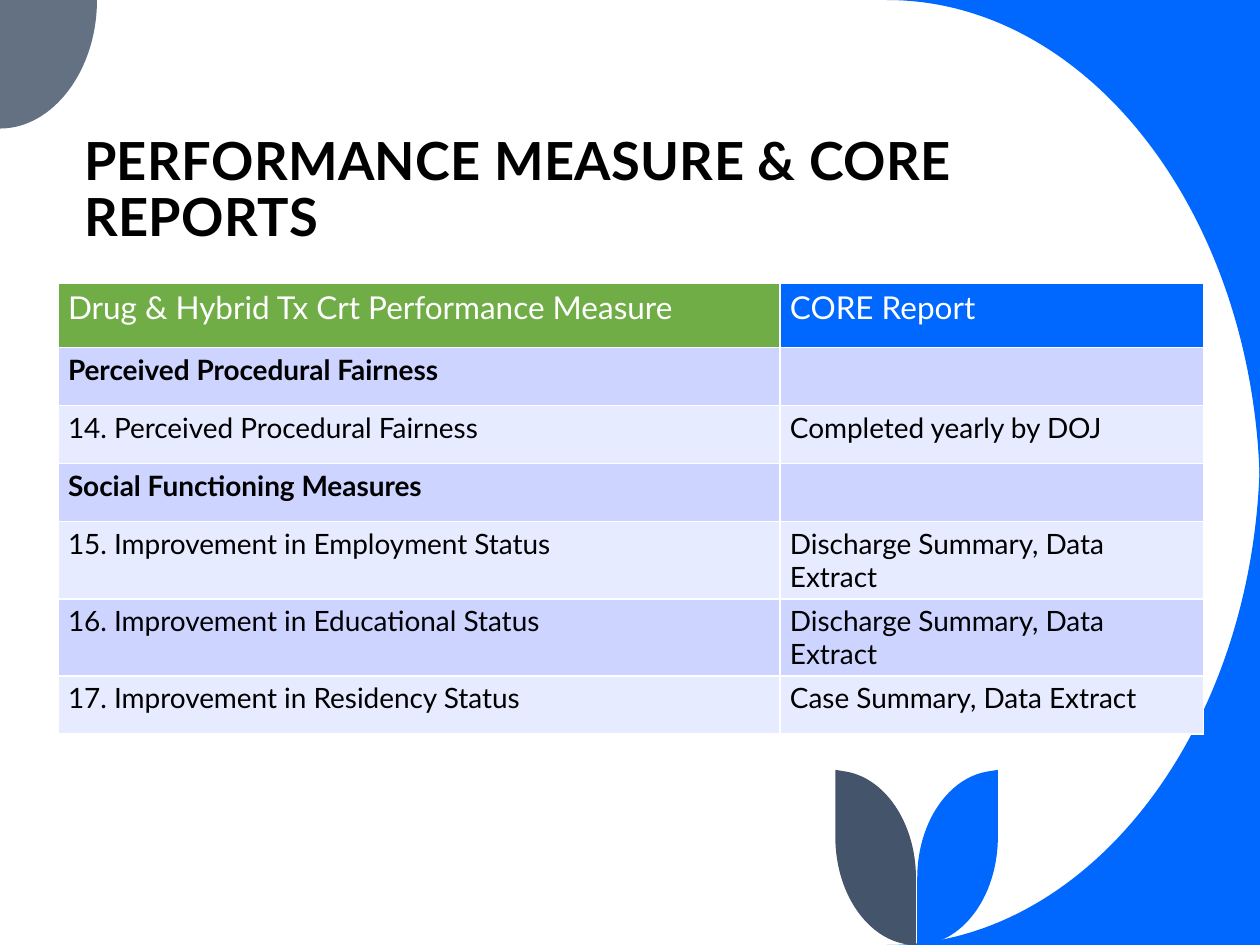
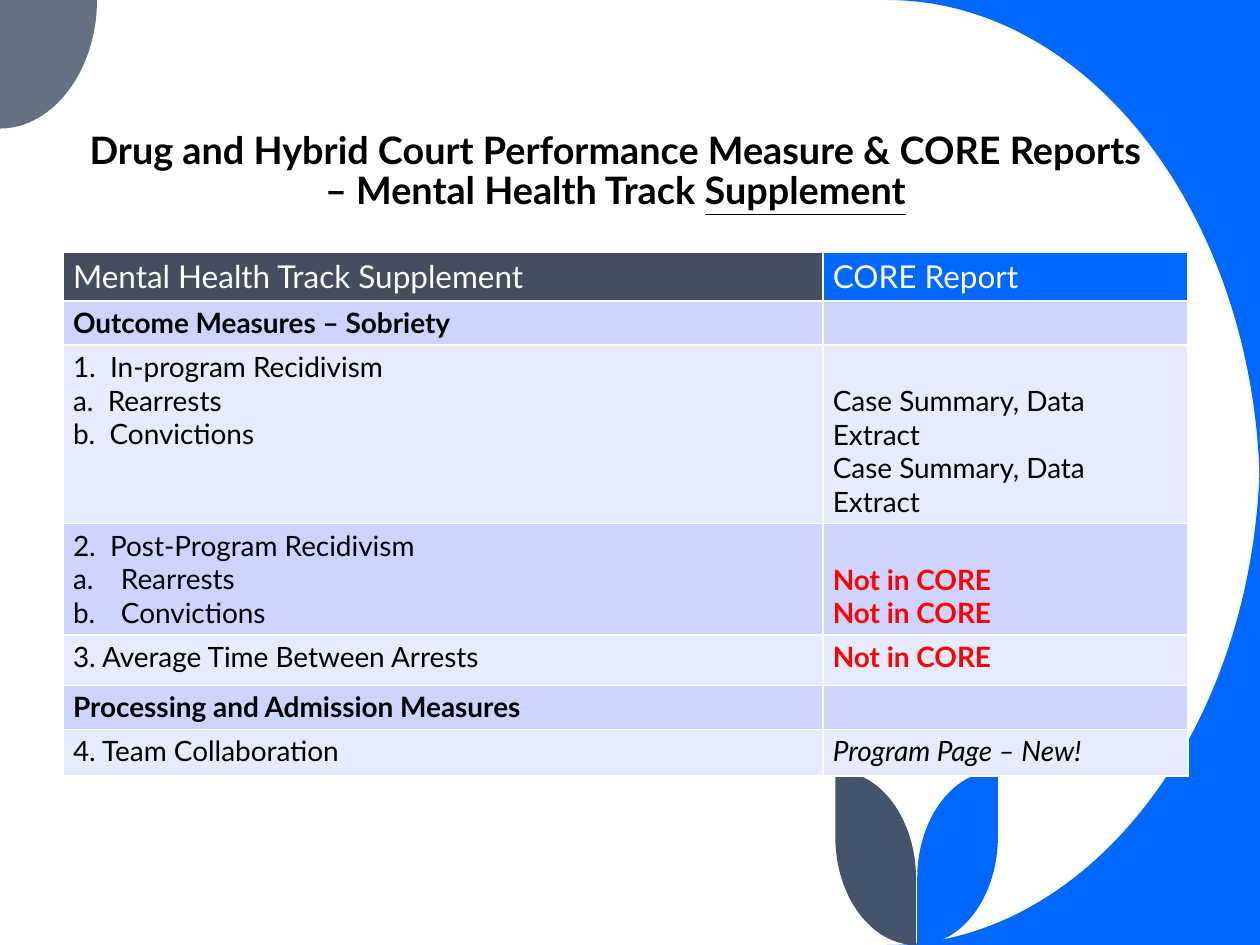
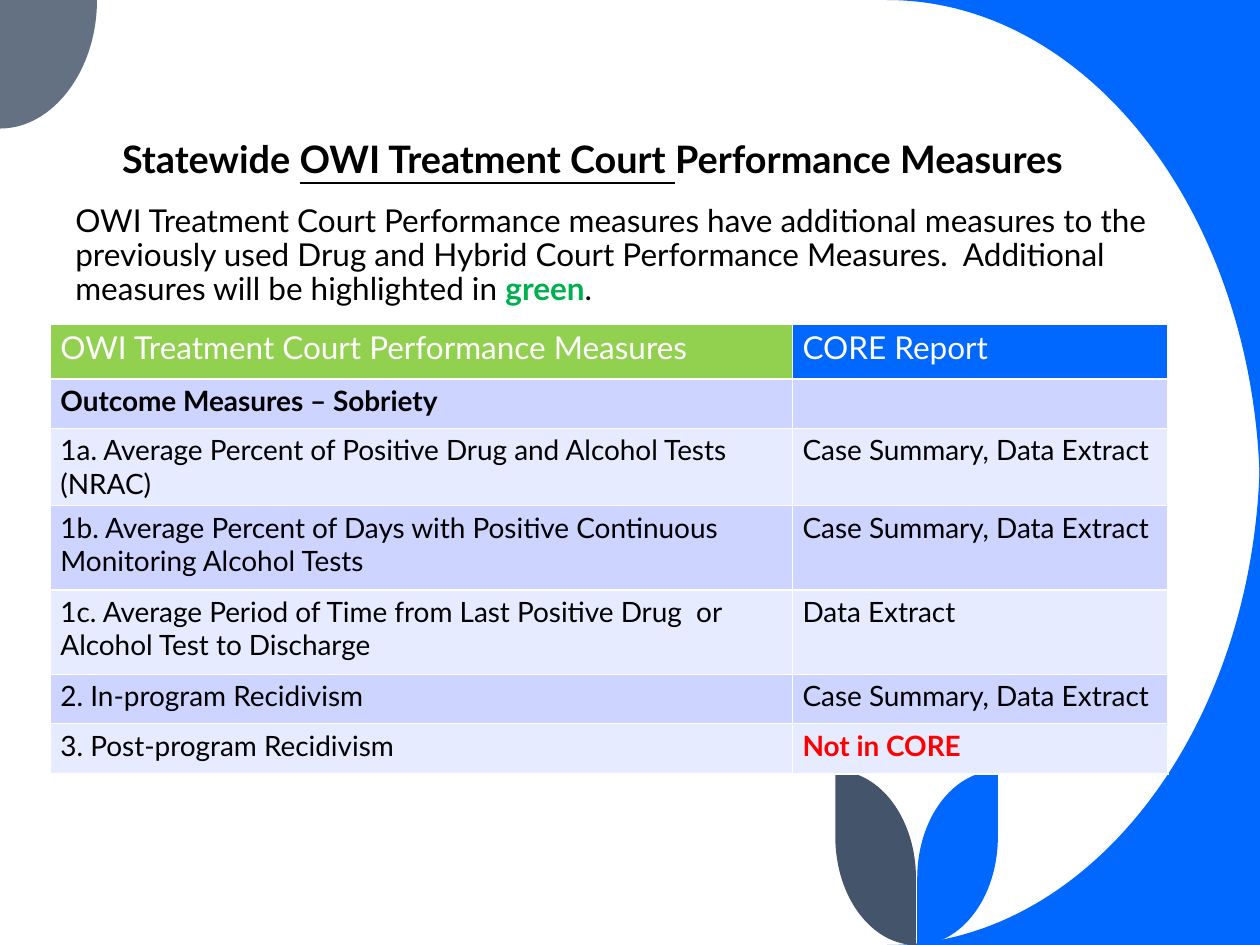
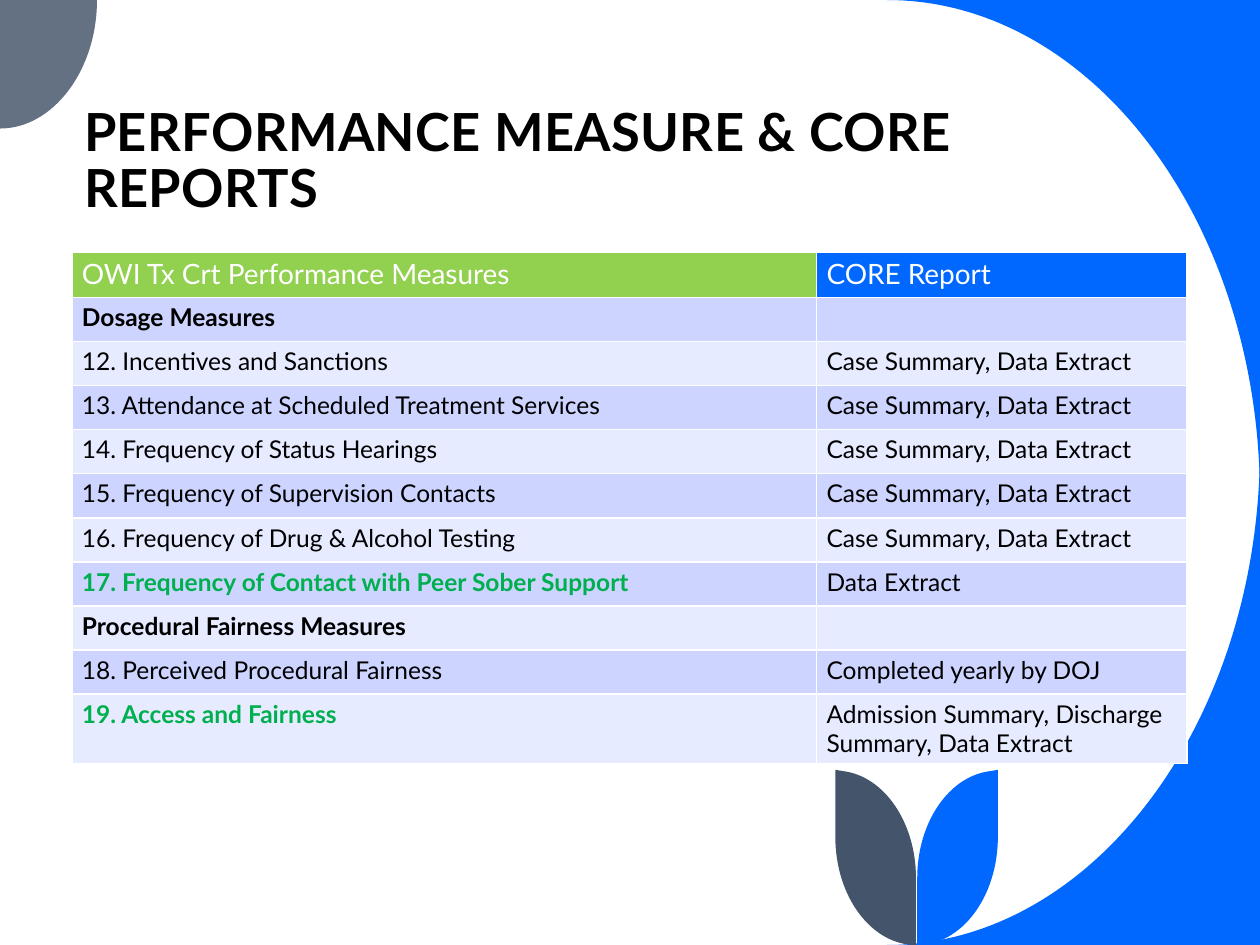
from lxml import etree
from pptx import Presentation
from pptx import util as u
from pptx.dml.color import RGBColor
from pptx.enum import text
from pptx.oxml.ns import qn

HUE = {"blue": "0068FF", "grey": "637183", "slate": "44546A", "dark": "434E5E",
       "leaf": "70AD47", "lime": "92D050", "green": "00B050", "red": "FF0000",
       "black": "000000", "white": "FFFFFF", "odd": "CCD4FF", "even": "E7EBFF"}
MARKS = {"*": {"bold": True}, "_": {"underline": True}, "/": {"italic": True},
         "!": {"bold": True, "hue": "red"}, "+": {"bold": True, "hue": "green"}}
CASE = "Case Summary, Data Extract"
EXIT = "Discharge Summary, Data Extract"
DATA = "Data Extract"
NONE = "!Not in CORE"
CORE = "CORE Report"
BIG = {"size": u.Pt(30), "bold": True, "spc": 24}
MID = {"size": u.Pt(21.6), "bold": True}
LEFT, MIDDLE = text.PP_ALIGN.LEFT, text.PP_ALIGN.CENTER
HEAD = "PERFORMANCE MEASURE & CORE REPORTS"


def write(par, words, base):
    for part in words.split("|"):
        form = {"name": "Lato", "hue": "black", **base}
        if part[0] in MARKS:
            form.update(MARKS[part[0]])
            part = part[1:]
        run = par.add_run()
        run.text = part
        run.font.color.rgb = RGBColor.from_string(HUE[form.pop("hue")])
        if "spc" in form:
            run._r.get_or_add_rPr().set("spc", str(form.pop("spc")))
        for key, val in form.items():
            setattr(run.font, key, val)


def add_box(page, at, words, base, align, anchor, gap=0):
    frame = page.shapes.add_textbox(*map(u.Inches, at)).text_frame
    frame.word_wrap = True
    frame.vertical_anchor = anchor
    par = frame.paragraphs[0]
    for key, val in {"alignment": align, "line_spacing": 0.9, "space_before": u.Pt(gap)}.items():
        setattr(par, key, val)
    write(par, words, base)


pages = [
    {"title": ((0.57, 1.25, 8.77, 0.77), HEAD, BIG, LEFT),
     "at": (0.46, 2.25), "cols": (5.73, 3.36), "hue": "leaf", "size": 16,
     "rows": [
         (0.51, "Drug & Hybrid Tx Crt Performance Measure", CORE),
         (0.46, "*Perceived Procedural Fairness", ""),
         (0.46, "14. Perceived Procedural Fairness", "Completed yearly by DOJ"),
         (0.46, "*Social Functioning Measures", ""),
         (0.46, "15. Improvement in Employment Status", EXIT),
         (0.46, "16. Improvement in Educational Status", EXIT),
         (0.46, "17. Improvement in Residency Status", CASE)]},
    {"title": ((0.5, 0.92, 8.77, 0.82),
               "Drug and Hybrid Court Performance Measure & CORE Reports – Mental Health Track |_Supplement",
               MID, MIDDLE),
     "at": (0.5, 2), "cols": (6.03, 2.9), "hue": "dark", "size": 16,
     "rows": [
         (0.39, "Mental Health Track Supplement", CORE),
         (0.35, "*Outcome Measures – Sobriety", ""),
         (1.36, "1.  In-program Recidivism\na.  Rearrests\nb.  Convictions", f"\n{CASE}\n{CASE}"),
         (0.87, "2.  Post-Program Recidivism\n#Rearrests\n#Convictions", f"\n{NONE}\n{NONE}"),
         (0.4, "3. Average Time Between Arrests", NONE),
         (0.35, "*Processing and Admission Measures", ""),
         (0.37, "4. Team Collaboration", "/Program Page – New!")]},
    {"title": ((0.87, 0.87, 8.02, 0.62),
               "Statewide |_OWI Treatment Court |Performance Measures", MID, LEFT),
     "note": "OWI Treatment Court Performance measures have additional measures to the previously used "
             "Drug and Hybrid Court Performance Measures.  Additional measures will be highlighted in |+green|.",
     "at": (0.4, 2.57), "cols": (5.89, 2.98), "hue": "lime", "size": 16,
     "rows": [
         (0.44, "OWI Treatment Court Performance Measures", CORE),
         (0.39, "*Outcome Measures – Sobriety", ""),
         (0.39, "1a. Average Percent of Positive Drug and Alcohol Tests (NRAC)", CASE),
         (0.67, "1b. Average Percent of Days with Positive Continuous Monitoring Alcohol Tests", CASE),
         (0.67, "1c. Average Period of Time from Last Positive Drug  or Alcohol Test to Discharge", DATA),
         (0.39, "2. In-program Recidivism", CASE),
         (0.4, "3. Post-program Recidivism", NONE)]},
    {"title": ((0.57, 1.02, 8.77, 0.77), HEAD, BIG, LEFT),
     "at": (0.57, 2), "cols": (5.91, 2.94), "hue": "lime", "size": 14,
     "rows": [
         (0.36, "OWI Tx Crt Performance Measures", CORE),
         (0.35, "*Dosage Measures", ""),
         (0.35, "12. Incentives and Sanctions", CASE),
         (0.35, "13. Attendance at Scheduled Treatment Services", CASE),
         (0.35, "14. Frequency of Status Hearings", CASE),
         (0.35, "15. Frequency of Supervision Contacts", CASE),
         (0.35, "16. Frequency of Drug & Alcohol Testing", CASE),
         (0.35, "+17. Frequency of Contact with Peer Sober Support", DATA),
         (0.35, "*Procedural Fairness Measures", ""),
         (0.35, "18. Perceived Procedural Fairness", "Completed yearly by DOJ"),
         (0.55, "+19. Access and Fairness", "Admission Summary, Discharge Summary, Data Extract")]},
]

deck = Presentation()
deck.slide_width, deck.slide_height = u.Inches(10), u.Inches(7.5)
blank = deck.slide_layouts[6]
for spare in list(blank.placeholders):
    blank.shapes.element.remove(spare.element)
slides = [deck.slides.add_slide(blank) for _ in pages]

arc = [(10, 0), (7.04, 0), (8.67, 0, 10, 1.77, 10, 3.95)]
dot = [(0, 0), (0.77, 0), (0.77, 0.56, 0.42, 1.02, 0, 1.02)]
leaf = [(6.63, 6.11), (6.63, 6.64), (6.63, 7.12, 6.92, 7.5, 7.27, 7.5),
        (7.27, 6.97), (7.27, 6.53, 7.02, 6.16, 6.69, 6.12)]
for route, hue, flip_x, flip_y in [(arc, "blue", 0, 0), (arc, "blue", 0, 7.5), (dot, "grey", 0, 0),
                                   (leaf, "blue", 14.55, 0), (leaf, "slate", 0, 0)]:
    dots = [step[i:i + 2] for step in route for i in range(0, len(step), 2)]
    dots = [(1000 * (flip_x - x if flip_x else x), 1000 * (flip_y - y if flip_y else y)) for x, y in dots]
    pen = slides[0].shapes.build_freeform(*dots[0], scale=u.Inches(1) / 1000)
    pen.add_line_segments(dots[1:], close=True)
    shape = pen.convert_to_shape()
    legs = iter(list(shape.element.iter(qn("a:lnTo"))))
    for step in route[1:]:
        leg = next(legs)
        if len(step) == 6:
            curve = etree.Element(qn("a:cubicBezTo"))
            leg.addprevious(curve)
            for bit in (leg, next(legs), next(legs)):
                curve.append(bit[0])
                bit.getparent().remove(bit)
    shape.shadow.inherit = False
    shape.fill.solid()
    shape.fill.fore_color.rgb = RGBColor.from_string(HUE[hue])
    shape.line.fill.background()
    blank.shapes.element.append(shape.element)

for page, plan in zip(slides, pages):
    add_box(page, *plan["title"], text.MSO_ANCHOR.BOTTOM)
    if "note" in plan:
        add_box(page, (0.5, 1.58, 8.77, 0.92), plan["note"], {"size": u.Pt(18)},
                LEFT, text.MSO_ANCHOR.TOP, 7.5)
    rows, cols = plan["rows"], plan["cols"]
    size = (sum(cols), sum(row[0] for row in rows))
    grid = page.shapes.add_table(len(rows), 2, *map(u.Inches, plan["at"] + size)).table
    for col, wide in zip(grid.columns, cols):
        col.width = u.Inches(wide)
    for r, (high, *words) in enumerate(rows):
        grid.rows[r].height = u.Inches(high)
        for c, word in enumerate(words):
            cell = grid.cell(r, c)
            drop = 0.27 if word.startswith("\n") else 0
            for key, val in {"left": 0.08, "right": 0.08, "top": 0.04 + drop, "bottom": 0.04}.items():
                setattr(cell, "margin_" + key, u.Inches(val))
            head = (plan["hue"], "blue")[c]
            hue = head if r == 0 else "odd" if r % 2 else "even"
            cell.fill.solid()
            cell.fill.fore_color.rgb = RGBColor.from_string(HUE[hue])
            for i, side in enumerate("LRTB"):
                line = etree.Element(qn("a:ln" + side), w=str(u.Pt(1)))
                paint = etree.SubElement(line, qn("a:solidFill"))
                etree.SubElement(paint, qn("a:srgbClr"), val=HUE["white"])
                cell._tc.get_or_add_tcPr().insert(i, line)
            base = {"size": u.Pt(plan["size"])}
            if r == 0:
                base = {"size": u.Pt(plan["size"] + 2), "hue": "white"}
            frame = cell.text_frame
            if not word:
                etree.SubElement(frame.paragraphs[0]._p, qn("a:endParaRPr"), sz=str(plan["size"] * 100))
                continue
            for i, row in enumerate(word.strip("\n").split("\n")):
                par = frame.add_paragraph() if i else frame.paragraphs[0]
                if row[0] == "#":
                    row = row[1:]
                    prop = par._p.get_or_add_pPr()
                    prop.set("marL", str(u.Inches(0.38)))
                    prop.set("indent", str(u.Inches(-0.38)))
                    etree.SubElement(prop, qn("a:buAutoNum"), type="alphaLcPeriod")
                write(par, row, base)

deck.save("out.pptx")
